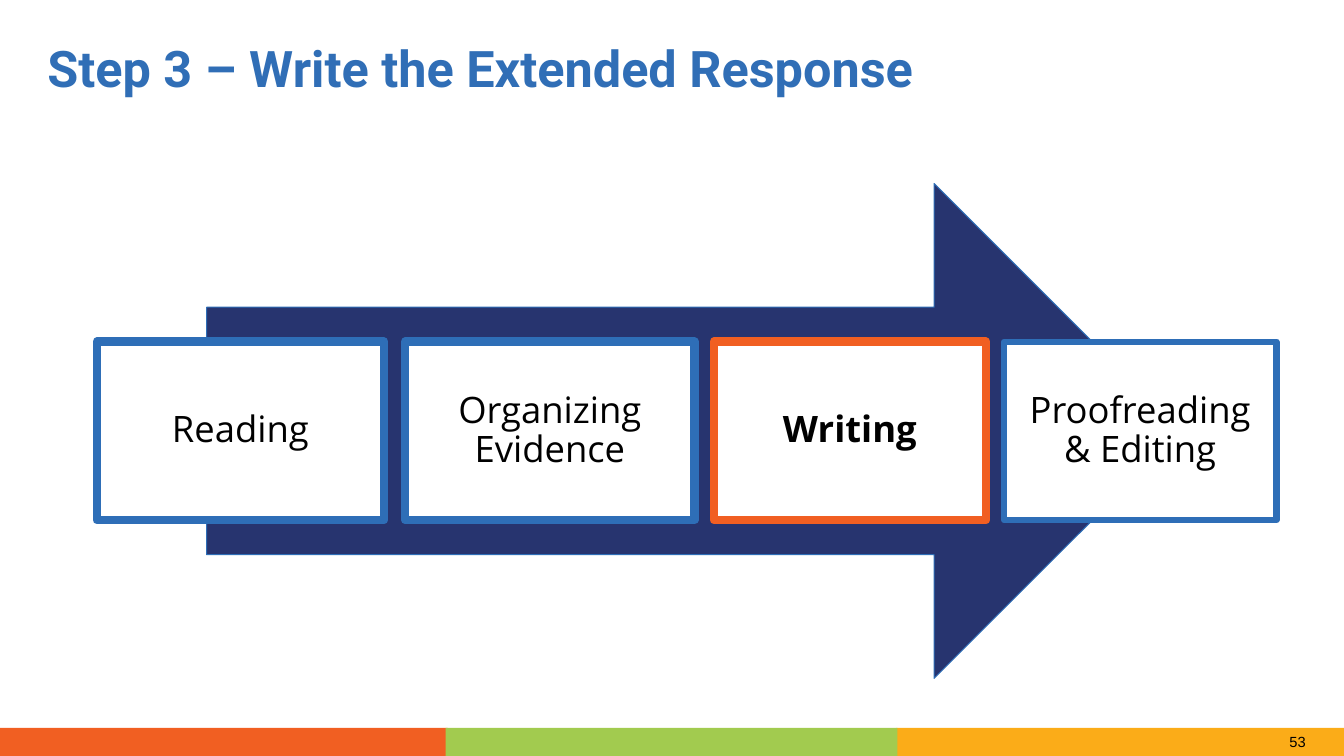
from pptx import Presentation
from pptx.dml.color import RGBColor
from pptx.enum.shapes import MSO_SHAPE as Preset
from pptx.enum.text import MSO_ANCHOR as Anchor, PP_ALIGN as Align
from pptx.util import Inches, Pt

COLORS = {
    "title": "306EB6",
    "blue": "2E6EB7",
    "navy": "27346F",
    "orange": "F15F22",
    "green": "A2CB4F",
    "yellow": "FBAC18",
    "white": "FFFFFF",
    "black": "000000",
}

FOOTER_TOP, FOOTER_HEIGHT = 7.22, 0.28
STEP_TOP, STEP_HEIGHT = 3.39, 1.77

FOOTER_BANDS = [
    (8.89, 4.44, "yellow"),
    (0, 4.44, "orange"),
    (4.42, 4.48, "green"),
]

STEPS = [
    ("Reading", 0.96, 2.85, "blue", 6, False),
    ("Organizing Evidence", 4.02, 2.87, "blue", 6, False),
    ("Writing", 7.08, 2.7, "orange", 6, True),
    ("Proofreading & Editing", 9.96, 2.7, "blue", 4.5, False),
]


def rgb(name):
    return RGBColor.from_string(COLORS[name])


def add_block(slide, preset, box, fill, line=None, width=0):
    shape = slide.shapes.add_shape(preset, *map(Inches, box))
    shape.shadow.inherit = False
    shape.fill.solid()
    shape.fill.fore_color.rgb = rgb(fill)
    if line:
        shape.line.color.rgb = rgb(line)
        shape.line.width = Pt(width)
    else:
        shape.line.fill.background()
    return shape


def write(shape, text, font, size, color="black", bold=False,
          align=Align.LEFT, anchor=Anchor.MIDDLE, margins=(0, 0), spacing=0.9):
    frame = shape.text_frame
    frame.word_wrap = True
    frame.vertical_anchor = anchor
    frame.margin_left = frame.margin_right = Inches(margins[0])
    frame.margin_top = frame.margin_bottom = Inches(margins[1])
    paragraph = frame.paragraphs[0]
    paragraph.alignment = align
    paragraph.line_spacing = spacing
    run = paragraph.add_run()
    run.text = text
    run.font.name = font
    run.font.size = Pt(size)
    run.font.bold = bold
    run.font.color.rgb = rgb(color)


def add_label(slide, box, text, font, size, **style):
    write(slide.shapes.add_textbox(*map(Inches, box)), text, font, size, **style)


def add_footer(slide, number):
    for left, width, color in FOOTER_BANDS:
        add_block(slide, Preset.RECTANGLE, (left, FOOTER_TOP, width, FOOTER_HEIGHT), color)
    add_label(slide, (12.69, FOOTER_TOP, 0.38, FOOTER_HEIGHT), number, "Arial", 10.5,
              anchor=Anchor.TOP, margins=(0.1, 0.05), spacing=1.0)


def add_step(slide, text, left, width, outline, weight, bold):
    box = (left, STEP_TOP, width, STEP_HEIGHT)
    shape = add_block(slide, Preset.RECTANGLE, box, "white", outline, weight)
    write(shape, text, "Open Sans", 26, bold=bold, align=Align.CENTER,
          margins=(0.11, 0.11))


def main():
    presentation = Presentation()
    presentation.slide_width = Inches(13.33)
    presentation.slide_height = Inches(7.5)
    slide = presentation.slides.add_slide(presentation.slide_layouts[6])
    add_footer(slide, "53")
    add_label(slide, (0.47, 0.47, 12.4, 0.47), "Step 3 – Write the Extended Response",
              "Roboto", 36, color="title", bold=True)
    add_block(slide, Preset.RIGHT_ARROW, (2.05, 1.82, 9.67, 4.91), "navy", "blue", 0.75)
    for step in STEPS:
        add_step(slide, *step)
    presentation.save("out.pptx")


if __name__ == "__main__":
    main()
